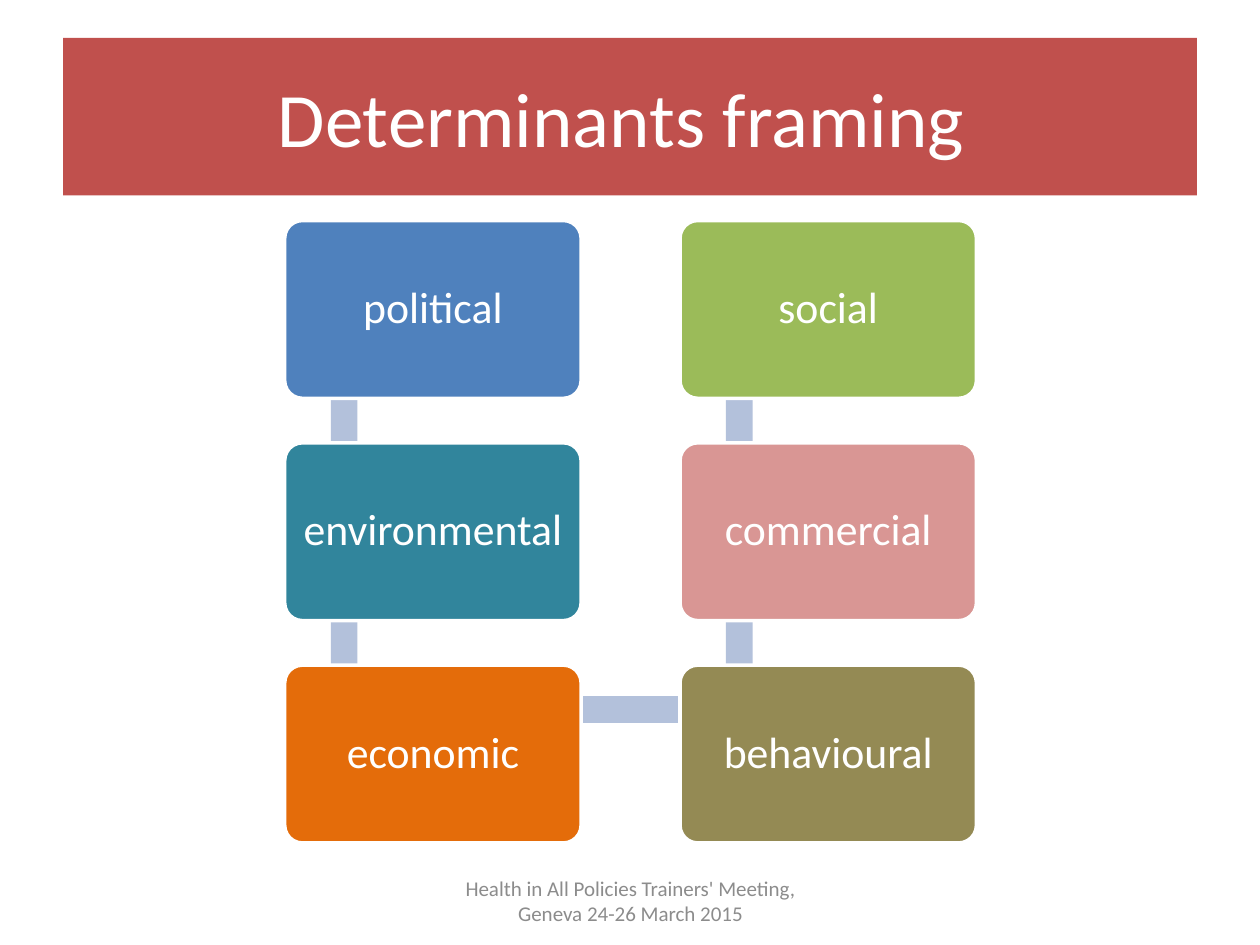
from dataclasses import dataclass
from itertools import zip_longest
from math import atan2, degrees, hypot

from pptx import Presentation
from pptx.dml.color import RGBColor as RGB
from pptx.enum.shapes import MSO_SHAPE as Shape
from pptx.enum.text import MSO_ANCHOR as Anchor, PP_ALIGN as Align
from pptx.util import Inches, Pt


@dataclass(frozen=True)
class Theme:
    font: str = "Calibri"
    white: str = "FFFFFF"
    band: str = "C0504D"
    link: str = "B3C1DB"
    grey: str = "8C8C8C"
    head: int = 44
    body: int = 25
    foot: int = 12


THEME = Theme()

# Cards in the order of the path: label, fill, column, row
CARDS = [
    ("political", "4F81BD", 0, 0),
    ("environmental", "31859C", 0, 1),
    ("economic", "E46C0A", 0, 2),
    ("behavioural", "948A54", 1, 2),
    ("commercial", "D99694", 1, 1),
    ("social", "9BBB59", 1, 0),
]


def paint(shape, color):
    shape.shadow.inherit = False
    shape.fill.solid()
    shape.fill.fore_color.rgb = RGB.from_string(color)


def write(shape, text, size, color):
    frame = shape.text_frame
    frame.word_wrap = True
    frame.vertical_anchor = Anchor.MIDDLE
    para = frame.paragraphs[0]
    para.text = text
    para.alignment = Align.CENTER
    para.font.name = THEME.font
    para.font.size = Pt(size)
    para.font.color.rgb = RGB.from_string(color)
    return para


def add_box(slide, kind, *box):
    return slide.shapes.add_shape(kind, *map(Inches, box))


def add_title(slide, box, text):
    title = slide.shapes.title
    title.left, title.top, title.width, title.height = map(Inches, box)
    title.fill.solid()
    title.fill.fore_color.rgb = RGB.from_string(THEME.band)
    write(title, text, THEME.head, THEME.white)


def add_link(slide, start, end, thick):
    """Bar centred between two points and turned along their line."""
    dx, dy = end[0] - start[0], end[1] - start[1]
    size = hypot(dx, dy)
    left = (start[0] + end[0] - size) / 2
    top = (start[1] + end[1] - thick) / 2
    bar = add_box(slide, Shape.RECTANGLE, left, top, size, thick)
    bar.rotation = degrees(atan2(dy, dx)) % 360
    paint(bar, THEME.link)
    bar.line.fill.background()


def add_card(slide, box, text, color):
    card = add_box(slide, Shape.ROUNDED_RECTANGLE, *box)
    card.adjustments[0] = 0.1
    paint(card, color)
    card.line.color.rgb = RGB.from_string(THEME.white)
    card.line.width = Pt(2)
    write(card, text, THEME.body, THEME.white).line_spacing = 0.9


def add_path(slide, box, cards):
    """Snake of cards on a grid; each link lies behind the cards it joins."""
    left, top, width, height = box
    cols = 1 + max(card[2] for card in cards)
    rows = 1 + max(card[3] for card in cards)
    wide = width / (cols + (cols - 1) / 3)
    high = height / (rows + (rows - 1) / 4)

    def place(card):
        return left + card[2] * wide * 4 / 3, top + card[3] * high * 5 / 4

    def joint(card):
        x, y = place(card)
        return x + wide / 5, y + high / 4

    for card, after in zip_longest(cards, cards[1:]):
        if after:
            add_link(slide, joint(card), joint(after), high * 0.15)
        add_card(slide, (*place(card), wide, high), card[0], card[1])


def add_footer(slide, box, text):
    foot = slide.shapes.add_textbox(*map(Inches, box))
    write(foot, text, THEME.foot, THEME.grey)


def main():
    deck = Presentation()
    deck.slide_width, deck.slide_height = Inches(10), Inches(7.5)
    slide = deck.slides.add_slide(deck.slide_layouts[5])

    add_title(slide, (0.5, 0.3, 9, 1.25), "Determinants framing ")
    add_path(slide, (2.26, 1.75, 5.49, 4.94), CARDS)
    add_footer(slide, (3.42, 6.95, 3.17, 0.4),
               "Health in All Policies Trainers' Meeting, Geneva 24-26 March 2015")

    deck.save("out.pptx")


if __name__ == "__main__":
    main()
